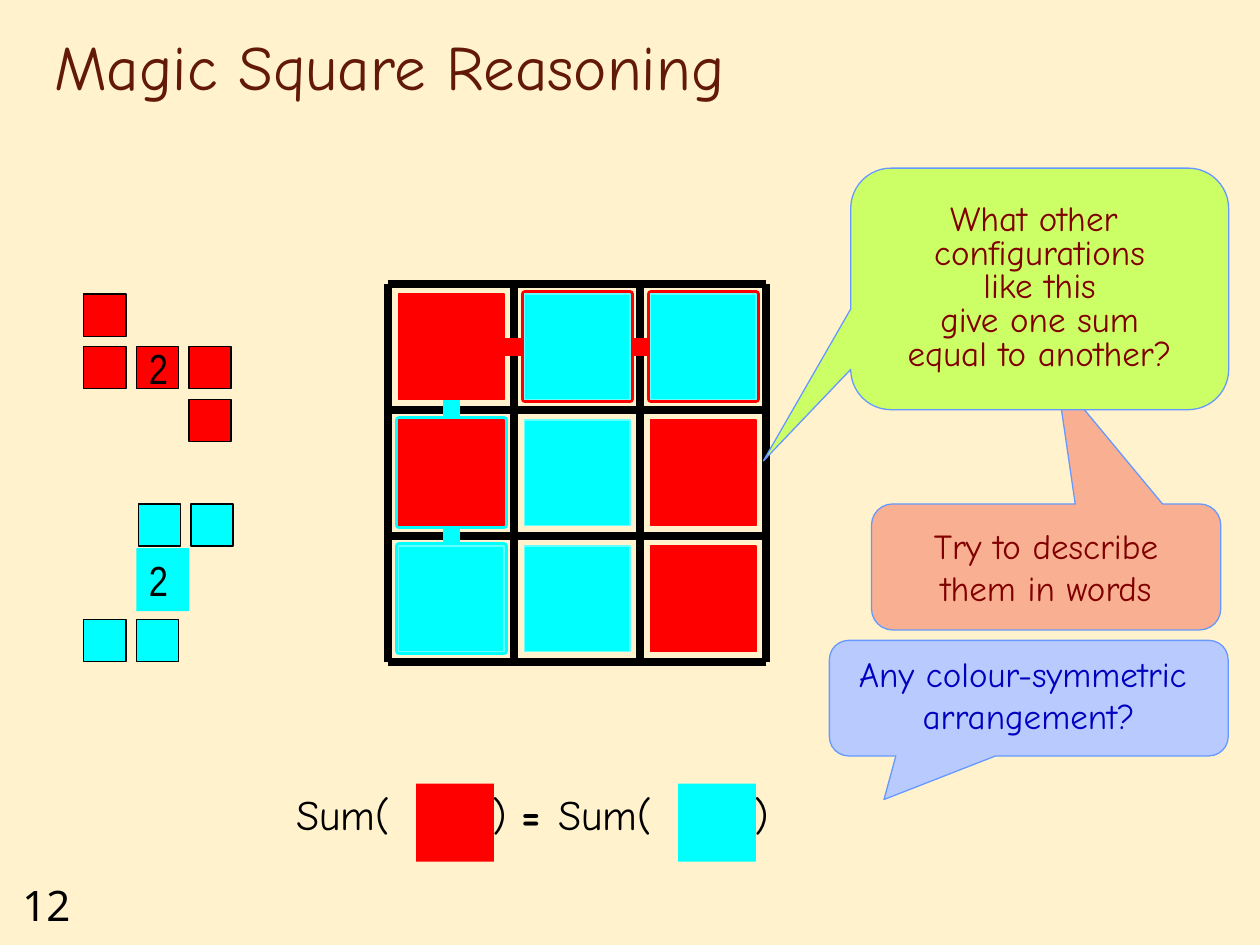
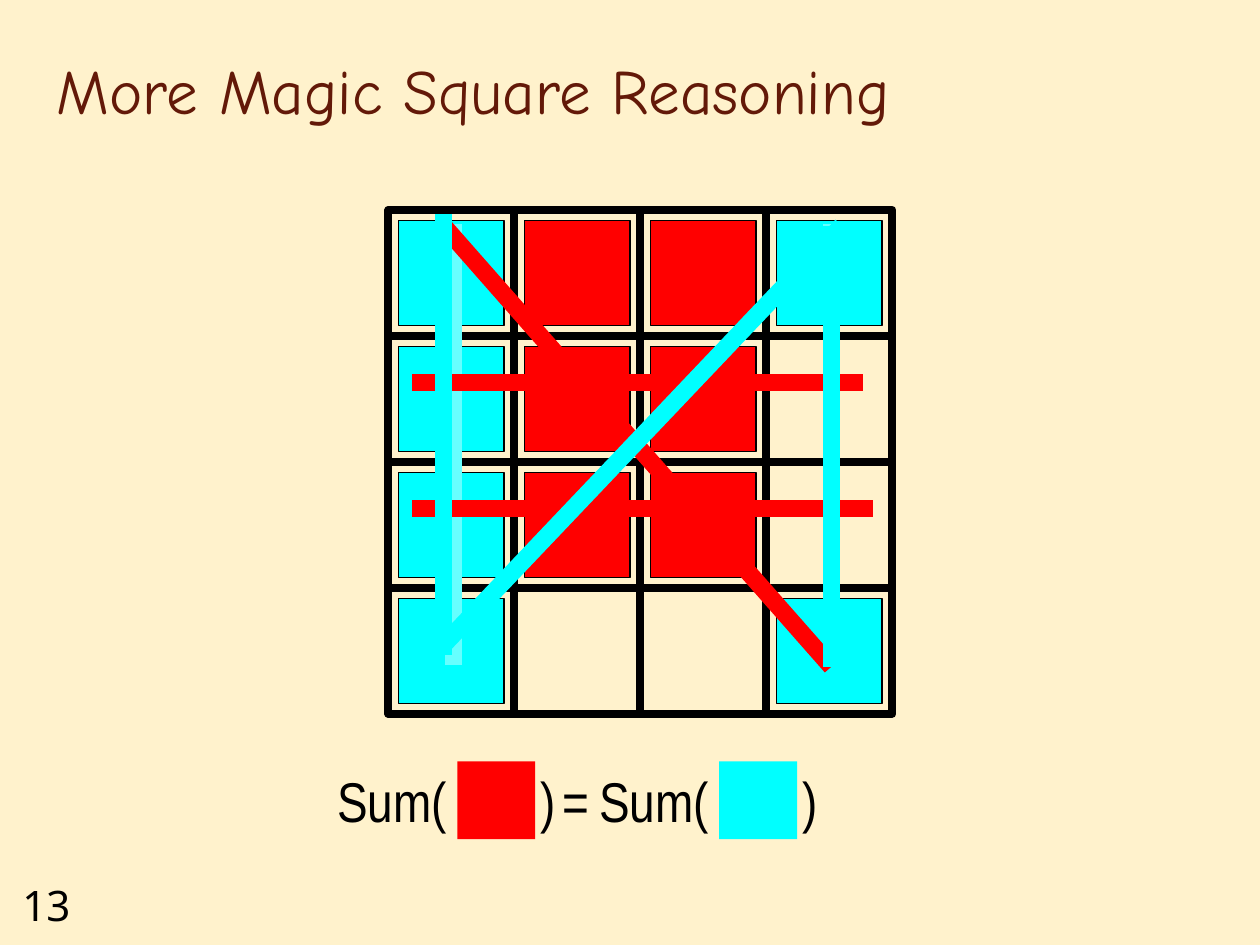
from lxml.etree import SubElement
from pptx import Presentation
from pptx.dml.color import RGBColor
from pptx.enum.shapes import MSO_CONNECTOR, MSO_SHAPE
from pptx.enum.text import MSO_ANCHOR, PP_ALIGN
from pptx.oxml.ns import qn
from pptx.util import Cm, Pt

# Colours
CREAM = RGBColor(0xFF, 0xF2, 0xCC)
BROWN = RGBColor(0x63, 0x19, 0x08)
BLACK = RGBColor(0, 0, 0)
RED = RGBColor(0xFF, 0, 0)
CYAN = RGBColor(0, 0xFF, 0xFF)
PALE_CYAN = RGBColor(0x66, 0xFF, 0xFF)
MAROON = RGBColor(0x80, 0, 0)
NAVY = RGBColor(0, 0, 0xBF)
SALMON = RGBColor(0xF9, 0xB0, 0x92)
LIME = RGBColor(0xCC, 0xFF, 0x66)
PERIWINKLE = RGBColor(0xB9, 0xCA, 0xFF)
CALLOUT_EDGE = RGBColor(0x66, 0x99, 0xFF)
TILE_FILLS = {"R": RED, "C": CYAN}

# Fonts
COMIC = "Comic Neue"
NARROW = "Arial Narrow"
NOTO = "Noto Sans"

# Grid geometry, in cm
GRID_LEFT = 7.83
CELL = 2.54
TILE = 2.12
INSET = 0.21
SMALL_PITCH = 1.06
SMALL_TILE = 0.85


def cm(*lengths):
    return [Cm(length) for length in lengths]


def set_text(sp, text, size, font, color=BLACK, bold=False):
    p = sp.text_frame.paragraphs[0]
    p.text = text
    for r in p.runs:
        r.font.size = Pt(size)
        r.font.name = font
        r.font.color.rgb = color
        r.font.bold = bold
    return p


def add_text(s, box, text, size, font, color=BLACK, bold=False):
    sp = s.shapes.add_textbox(*cm(*box))
    sp.text_frame.word_wrap = True
    set_text(sp, text, size, font, color, bold)


def add_box(s, box, fill=None, line=None, width=0.75, kind=MSO_SHAPE.RECTANGLE):
    sp = s.shapes.add_shape(kind, *cm(*box))
    sp.shadow.inherit = False
    if fill is None:
        sp.fill.background()
    else:
        sp.fill.solid()
        sp.fill.fore_color.rgb = fill
    if line is None:
        sp.line.fill.background()
    else:
        sp.line.color.rgb = line
        sp.line.width = Pt(width)
    return sp


def add_line(s, x1, y1, x2, y2, color, width=10):
    c = s.shapes.add_connector(MSO_CONNECTOR.STRAIGHT, *cm(x1, y1, x2, y2))
    c.line.color.rgb = color
    c.line.width = Pt(width)
    SubElement(c._element.spPr, qn("a:effectLst"))


def add_tiles(s, rows, left, top, edges, pitch=CELL, size=TILE, width=0.75):
    """Draw a square for each R or C in the rows; a dot leaves a gap."""
    for i, row in enumerate(rows):
        for j, key in enumerate(row):
            if key in TILE_FILLS:
                box = (left + j * pitch, top + i * pitch, size, size)
                add_box(s, box, TILE_FILLS[key], edges[key], width)


def add_callout(s, box, tip, fill, text, color, anchor=MSO_ANCHOR.MIDDLE, spacing=1.0):
    sp = add_box(s, box, fill, CALLOUT_EDGE, kind=MSO_SHAPE.ROUNDED_RECTANGULAR_CALLOUT)
    for i, value in enumerate((*tip, 0.167)):
        sp.adjustments[i] = value
    tf = sp.text_frame
    tf.word_wrap = False
    tf.vertical_anchor = anchor
    p = set_text(sp, text, 20, COMIC, color)
    p.alignment = PP_ALIGN.CENTER
    p.line_spacing = spacing


def add_equation(s, left, top, size, font, close_dx, bold_equals=False):
    """Write Sum(red) = Sum(cyan) with a square inside each bracket."""
    for x, fill in ((left, RED), (left + 5.28, CYAN)):
        add_box(s, (x + 2.67, top + 0.03, 1.57, 1.57), fill)
        add_text(s, (x, top, 3.5, 1.5), "Sum(", size, font)
        add_text(s, (x + close_dx, top, 1.2, 1.5), ")", size, font)
    add_text(s, (left + 4.54, top, 1.57, 1.5), "=", size, font, bold=bold_equals)


def add_page(prs, number, title, title_box):
    s = prs.slides.add_slide(prs.slide_layouts[6])
    s.background.fill.solid()
    s.background.fill.fore_color.rgb = CREAM
    add_text(s, (0.2, 17.6, 1.9, 1.27), str(number), 24, NOTO)
    add_text(s, title_box, title, 36, COMIC, BROWN)
    return s


def build_reasoning(prs):
    s = add_page(prs, 12, "Magic Square Reasoning", (0.84, 0.43, 21.59, 1.7))
    top, side = 5.72, 3 * CELL

    # Ruled 3 by 3 grid
    for i in range(4):
        x, y = GRID_LEFT + i * CELL, top + i * CELL
        add_line(s, x, top, x, top + side, BLACK, 4.5)
        add_line(s, GRID_LEFT, y, GRID_LEFT + side, y, BLACK, 4.5)

    # Heavy frames, the links between them, and the tiles on top
    tile_left, tile_top = GRID_LEFT + INSET, top + INSET
    add_tiles(s, (".RR", "C..", "C.."), tile_left, tile_top, TILE_FILLS, width=4.5)
    add_line(s, 8.26, 6.99, 15.04, 6.99, RED)
    add_line(s, 9.1, 6.15, 9.1, 12.7, CYAN)
    add_tiles(s, ("RCC", "RCR", "CCR"), tile_left, tile_top, {"R": RED, "C": PALE_CYAN})

    add_equation(s, 5.72, 15.77, 24, COMIC, 3.96, bold_equals=True)

    # Callouts
    add_callout(s, (17.57, 10.16, 7.04, 2.54), (0.03, -1.514), SALMON,
                "Try to describe\nthem in words", MAROON)
    add_callout(s, (17.15, 3.39, 7.62, 4.87), (-0.731, 0.712), LIME,
                "What other \nconfigurations\nlike this\ngive one sum\nequal to another?",
                MAROON, spacing=0.8)
    add_callout(s, (16.72, 12.91, 8.04, 2.33), (-0.363, 0.877), PERIWINKLE,
                "Any colour-symmetric \narrangement?", NAVY, MSO_ANCHOR.TOP)

    # Small figures with the cell that counts twice
    edges = dict.fromkeys(TILE_FILLS, BLACK)
    for rows, x, y in ((("R..", "RRR", "..R"), 1.69, 5.93),
                       ((".CC",), 1.73, 10.16),
                       (("CC.",), 1.69, 12.49)):
        add_tiles(s, rows, x, y, edges, SMALL_PITCH, SMALL_TILE)
    double_cell = (2.75, 11.05, SMALL_PITCH, 1.27)
    add_box(s, double_cell, CYAN)
    add_text(s, double_cell, "2", 24, NARROW)
    add_text(s, (2.75, 6.77, SMALL_PITCH, 1.27), "2", 24, NARROW)


def build_more_reasoning(prs):
    s = add_page(prs, 13, "More Magic Square Reasoning", (0.89, 0.91, 23.06, 3.07))
    top = 4.23

    # 4 by 4 grid and its tiles
    for i in range(4):
        for j in range(4):
            add_box(s, (GRID_LEFT + j * CELL, top + i * CELL, CELL, CELL),
                    line=BLACK, width=4.5)
    add_tiles(s, ("CRRC", "CRR.", "CRR.", "C..C"), GRID_LEFT + INSET, top + INSET,
              dict.fromkeys(TILE_FILLS, BLACK))

    # Lines through rows, columns and diagonals
    for x1, y1, x2, y2, color in (
        (9.14, 13.41, 9.14, 4.52, PALE_CYAN),
        (16.76, 13.41, 16.76, 4.52, PALE_CYAN),
        (16.76, 13.44, 8.94, 4.55, RED),
        (8.31, 7.71, 17.4, 7.71, RED),
        (8.31, 10.25, 17.6, 10.25, RED),
        (16.76, 13.44, 16.76, 4.55, CYAN),
        (8.94, 13, 16.97, 4.55, CYAN),
        (8.94, 13.21, 8.94, 4.32, CYAN),
    ):
        add_line(s, x1, y1, x2, y2, color)

    add_equation(s, 6.55, 15.32, 32, NARROW, 4.09)


def main():
    prs = Presentation()
    prs.slide_width, prs.slide_height = cm(25.4, 19.05)
    build_reasoning(prs)
    build_more_reasoning(prs)
    prs.save("out.pptx")


if __name__ == "__main__":
    main()
